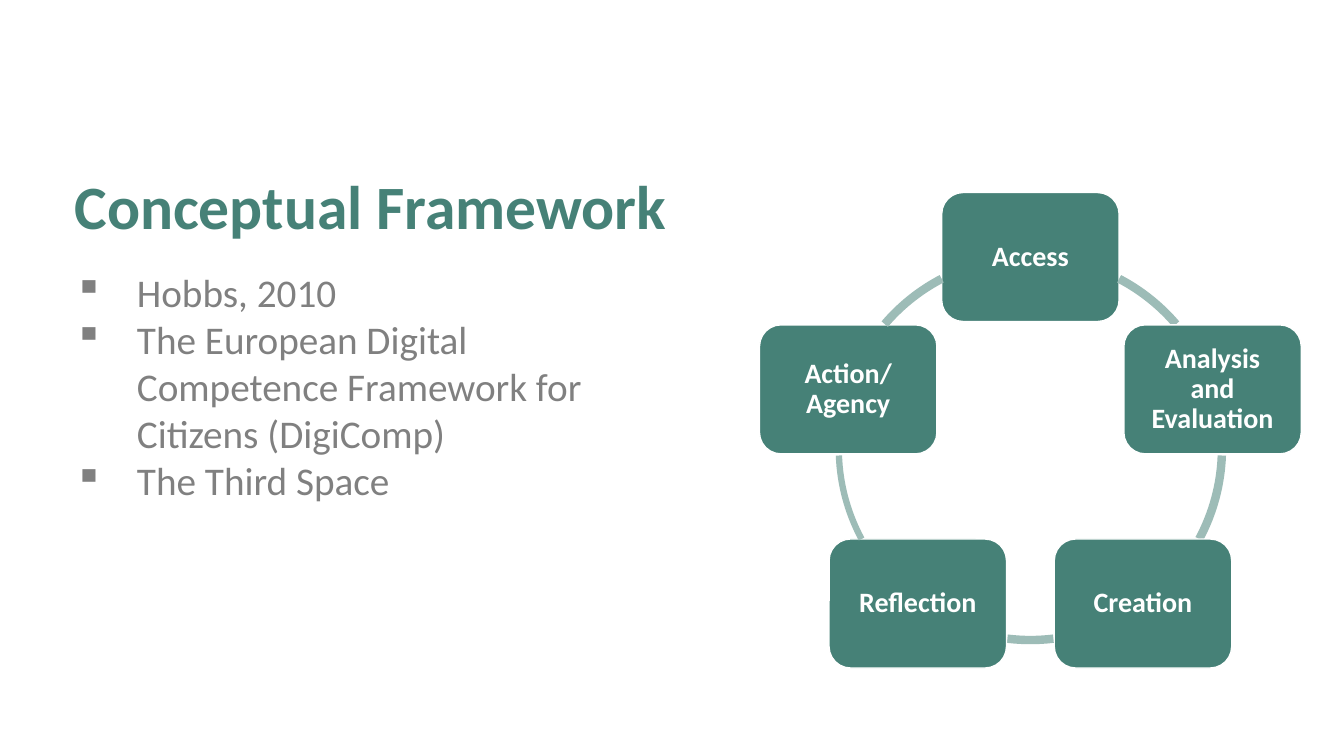
from math import cos, radians, sin

from lxml.etree import SubElement
from pptx import Presentation
from pptx.dml.color import RGBColor
from pptx.enum.shapes import MSO_SHAPE as SHAPE
from pptx.enum.text import MSO_ANCHOR as ANCHOR, PP_ALIGN as ALIGN
from pptx.oxml.ns import qn
from pptx.util import Inches, Pt

GREEN = RGBColor(0x46, 0x81, 0x77)
PALE_GREEN = RGBColor(0x9D, 0xBC, 0xB7)
GRAY = RGBColor(0x80, 0x80, 0x80)
WHITE = RGBColor(0xFF, 0xFF, 0xFF)

CENTER_X, CENTER_Y, RADIUS = 10.22, 4.45, 1.9
NODE_W, NODE_H = 1.76, 1.28
SOURCES = [
    "Hobbs, 2010",
    "The European Digital Competence Framework for Citizens (DigiComp)",
    "The Third Space",
]
CYCLE = [
    ("Access", 297.6, 319.5, 6),
    ("Analysis and Evaluation", 2.1, 28.2, 6),
    ("Creation", 83.1, 96.9, 6),
    ("Reflection", 151.8, 177.9, 4.5),
    ("Action/ Agency", 220.5, 242.4, 6),
]


def set_font(p, size, color, bold=False):
    style = {"name": "Calibri", "size": Pt(size), "bold": bold}
    for r in p.runs:
        for name, value in style.items():
            setattr(r.font, name, value)
        r.font.color.rgb = color


def add_text(s, x, y, w, h, anchor):
    tf = s.shapes.add_textbox(Inches(x), Inches(y), Inches(w), Inches(h)).text_frame
    tf.word_wrap = True
    tf.vertical_anchor = anchor
    return tf


def add_title(s, text):
    p = add_text(s, 0.64, 1.77, 11.5, 0.69, ANCHOR.BOTTOM).paragraphs[0]
    p.text = text
    p.line_spacing = 0.9
    set_font(p, 44, GREEN, True)


def add_bullets(s, items):
    tf = add_text(s, 0.64, 2.61, 6.04, 3.74, ANCHOR.TOP)
    for i, item in enumerate(items):
        p = tf.add_paragraph() if i else tf.paragraphs[0]
        pPr = p._p.get_or_add_pPr()
        pPr.set("marL", str(Inches(0.62)))
        pPr.set("indent", str(-Inches(0.62)))
        SubElement(pPr, qn("a:buChar")).set("char", "▪")
        p.text = item
        set_font(p, 28, GRAY)


def add_node(s, label, angle):
    x = CENTER_X + RADIUS * cos(radians(angle)) - NODE_W / 2
    y = CENTER_Y + RADIUS * sin(radians(angle)) - NODE_H / 2
    sp = s.shapes.add_shape(SHAPE.ROUNDED_RECTANGLE, Inches(x), Inches(y),
                            Inches(NODE_W), Inches(NODE_H))
    sp.shadow.inherit = False
    sp.fill.solid()
    sp.fill.fore_color.rgb = GREEN
    sp.line.color.rgb = WHITE
    sp.line.width = Pt(1)
    tf = sp.text_frame
    frame = {"word_wrap": True, "vertical_anchor": ANCHOR.MIDDLE}
    for side in ("left", "top", "right", "bottom"):
        frame[f"margin_{side}"] = Inches(0.14)
    for name, value in frame.items():
        setattr(tf, name, value)
    p = tf.paragraphs[0]
    p.text = label
    p.alignment = ALIGN.CENTER
    p.line_spacing = 0.9
    set_font(p, 20, WHITE, True)


def add_arc(s, start, end, width):
    sp = s.shapes.add_shape(SHAPE.ARC, Inches(CENTER_X - RADIUS), Inches(CENTER_Y - RADIUS),
                            Inches(2 * RADIUS), Inches(2 * RADIUS))
    for i, angle in enumerate((start, end)):
        sp.adjustments[i] = angle * 0.6
    sp.shadow.inherit = False
    sp.fill.background()
    sp.line.color.rgb = PALE_GREEN
    sp.line.width = Pt(width)


def main():
    prs = Presentation()
    prs.slide_width = Inches(13.33)
    prs.slide_height = Inches(7.5)
    s = prs.slides.add_slide(prs.slide_layouts[6])
    add_bullets(s, SOURCES)
    for i, (label, start, end, width) in enumerate(CYCLE):
        add_node(s, label, 360 / len(CYCLE) * i - 90)
        add_arc(s, start, end, width)
    add_title(s, "Conceptual Framework")
    prs.save("out.pptx")


if __name__ == "__main__":
    main()
